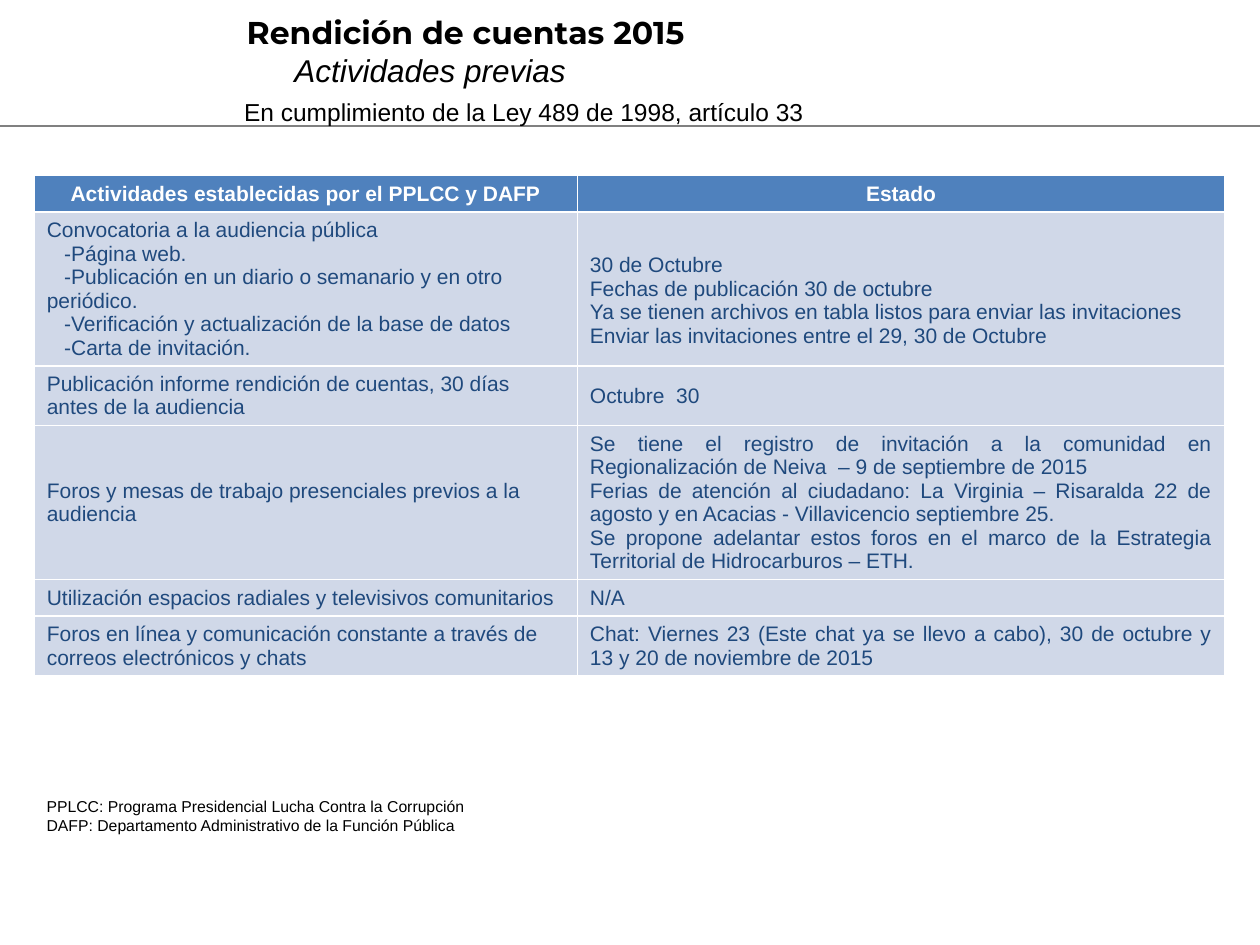
from dataclasses import dataclass

from lxml import etree
from pptx import Presentation
from pptx.dml.color import RGBColor
from pptx.enum.shapes import MSO_CONNECTOR, MSO_SHAPE
from pptx.enum.text import MSO_ANCHOR, PP_ALIGN
from pptx.oxml.ns import qn
from pptx.util import Cm, Pt

LEFT, CENTER, JUST = PP_ALIGN.LEFT, PP_ALIGN.CENTER, PP_ALIGN.JUSTIFY
MIDDLE, TOP = MSO_ANCHOR.MIDDLE, MSO_ANCHOR.TOP
WHITE = RGBColor(0xFF, 0xFF, 0xFF)
BLACK = RGBColor(0, 0, 0)
GRAY = RGBColor(0x80, 0x80, 0x80)
BLUE = RGBColor(0x4F, 0x81, 0xBD)
PALE = RGBColor(0xD0, 0xD8, 0xE8)
NAVY = RGBColor(0x1F, 0x49, 0x7D)


@dataclass
class Entry:
    lines: list[str]
    align: PP_ALIGN = LEFT
    inset: float = 0.13  # top margin in cm


@dataclass
class Row:
    height: float
    task: Entry
    state: Entry


ROWS = [
    Row(0.69, Entry(["Actividades establecidas por el PPLCC y DAFP"], CENTER),
        Entry(["Estado"], CENTER)),
    Row(3.1, Entry(["Convocatoria a la audiencia pública",
                    "-Página web.",
                    "-Publicación en un diario o semanario y en otro periódico.",
                    "-Verificación y actualización de la base de datos",
                    "-Carta de invitación."]),
        Entry(["30 de Octubre",
               "Fechas de publicación 30 de octubre",
               "Ya se tienen archivos en tabla listos para enviar las invitaciones",
               "Enviar las invitaciones entre el 29, 30 de Octubre"], inset=0.6)),
    Row(1.2, Entry(["Publicación informe rendición de cuentas, 30 días antes de la audiencia"]),
        Entry(["Octubre  30"])),
    Row(3.08, Entry(["Foros y mesas de trabajo presenciales previos a la audiencia"]),
        Entry(["Se tiene el registro de invitación a la comunidad en "
               "Regionalización de Neiva  – 9 de septiembre de 2015",
               "Ferias de atención al ciudadano: La Virginia – Risaralda 22 de "
               "agosto y en Acacias - Villavicencio septiembre 25.",
               "Se propone adelantar estos foros en el marco de la Estrategia "
               "Territorial de Hidrocarburos – ETH."], JUST)),
    Row(0.74, Entry(["Utilización espacios radiales y televisivos comunitarios"]),
        Entry(["N/A"], JUST)),
    Row(1.2, Entry(["Foros en línea y comunicación constante a través de correos "
                    "electrónicos y chats"]),
        Entry(["Chat: Viernes 23 (Este chat ya se llevo a cabo), 30 de octubre y "
               "13 y 20 de noviembre de 2015"], JUST)),
]


def indent(para, left: float, first: float) -> None:
    props = para._p.get_or_add_pPr()
    props.set("marL", str(Cm(left)))
    props.set("indent", str(Cm(first)))


def write(frame, lines: list[str], size: float, color: RGBColor,
          align: PP_ALIGN = LEFT, bold: bool = False) -> None:
    frame.word_wrap = True
    frame.text = "\n".join(lines)
    for para in frame.paragraphs:
        para.alignment = align
        font = para.font
        font.name, font.size, font.bold = "Arial", Pt(size), bold
        font.color.rgb = color


def edge(cell) -> None:
    props = cell._tc.get_or_add_tcPr()
    for side in ("lnL", "lnR", "lnT", "lnB"):
        line = etree.SubElement(props, qn(f"a:{side}"), w=str(Pt(1)))
        fill = etree.SubElement(line, qn("a:solidFill"))
        etree.SubElement(fill, qn("a:srgbClr"), val=str(WHITE))


def draw_cell(cell, entry: Entry, head: bool) -> None:
    edge(cell)
    cell.fill.solid()
    cell.fill.fore_color.rgb = BLUE if head else PALE
    cell.vertical_anchor = MIDDLE
    cell.margin_top = Cm(entry.inset)
    write(cell.text_frame, entry.lines, 12, WHITE if head else NAVY, entry.align, head)
    for para in cell.text_frame.paragraphs:
        if para.text.startswith("-"):
            indent(para, 0, 0.35)


def draw_table(shapes, rows: list[Row]) -> None:
    high = sum(row.height for row in rows)
    grid = shapes.add_table(len(rows), 2, Cm(0.69), Cm(3.54), Cm(24), Cm(high)).table
    grid.columns[0].width, grid.columns[1].width = Cm(10.95), Cm(13.05)
    for i, row in enumerate(rows):
        grid.rows[i].height = Cm(row.height)
        for j, entry in enumerate((row.task, row.state)):
            draw_cell(grid.cell(i, j), entry, i == 0)


def draw_title(title) -> None:
    title.left, title.top, title.width, title.height = Cm(4.72), Cm(0.13), Cm(20.78), Cm(1.8)
    frame = title.text_frame
    frame.vertical_anchor = MIDDLE
    write(frame, ["Rendición de cuentas 2015", "Actividades previas"], 18, BLACK)
    main, sub = frame.paragraphs
    indent(main, 0.96, -0.96)
    indent(sub, 0.96, 0)
    main.font.name, main.font.bold = "Montserrat", True
    sub.font.italic = True


def main() -> None:
    deck = Presentation()
    deck.slide_width, deck.slide_height = Cm(25.4), Cm(19.05)
    slide = deck.slides.add_slide(deck.slide_layouts[5])
    shapes = slide.shapes

    # Header rule
    rule = shapes.add_connector(MSO_CONNECTOR.STRAIGHT, 0, Cm(2.54), Cm(25.4), Cm(2.54))
    rule.line.color.rgb = GRAY
    rule.line.width = Pt(0.75)
    etree.SubElement(rule._element.spPr, qn("a:effectLst"))

    # Table of activities
    draw_table(shapes, ROWS)

    # Title and legal basis
    draw_title(shapes.title)
    law = shapes.add_textbox(Cm(4.67), Cm(1.83), Cm(14.43), Cm(0.86))
    write(law.text_frame, ["En cumplimiento de la Ley 489 de 1998, artículo 33"], 14, BLACK)

    # Key to the initials
    key = shapes.add_shape(MSO_SHAPE.RECTANGLE, Cm(0.69), Cm(15.93), Cm(12.01), Cm(1.02))
    key.shadow.inherit = False
    key.fill.solid()
    key.fill.fore_color.rgb = WHITE
    key.line.fill.background()
    key.text_frame.vertical_anchor = TOP
    write(key.text_frame, ["PPLCC: Programa Presidencial Lucha Contra la Corrupción",
                           "DAFP: Departamento Administrativo de la Función Pública"], 9, BLACK)

    deck.save("out.pptx")


if __name__ == "__main__":
    main()
